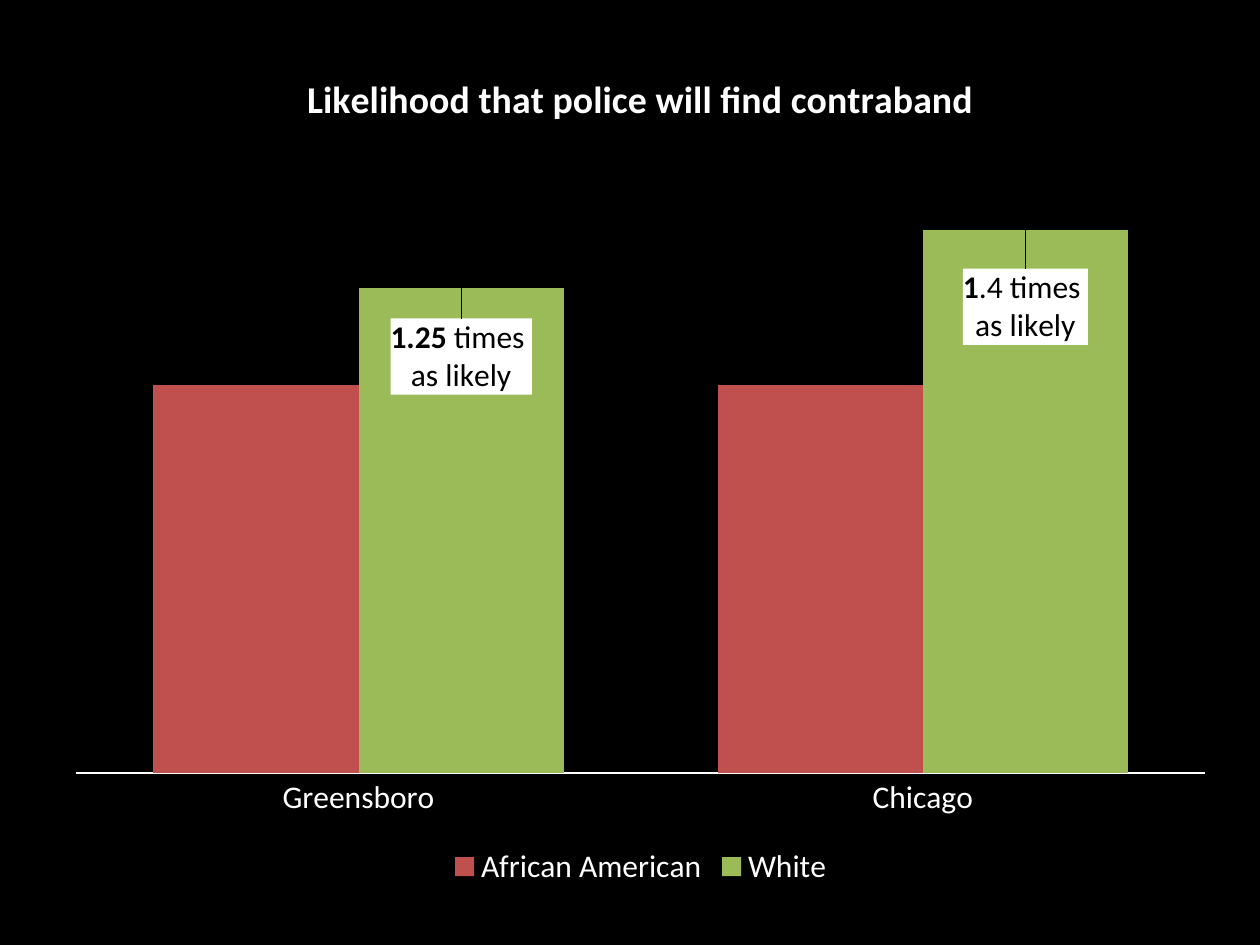
from lxml import etree
from pptx import Presentation
from pptx.chart.data import CategoryChartData
from pptx.dml.color import RGBColor
from pptx.enum.chart import XL_CHART_TYPE as ChartType
from pptx.enum.chart import XL_LABEL_POSITION as LabelPosition
from pptx.enum.chart import XL_LEGEND_POSITION as LegendPosition
from pptx.enum.chart import XL_TICK_LABEL_POSITION as TickLabels
from pptx.enum.chart import XL_TICK_MARK as TickMark
from pptx.oxml import parse_xml
from pptx.oxml.ns import qn
from pptx.util import Inches, Pt

BLACK = RGBColor(0x00, 0x00, 0x00)
WHITE = RGBColor(0xFF, 0xFF, 0xFF)
RED = RGBColor(0xC0, 0x50, 0x4D)
GREEN = RGBColor(0x9B, 0xBB, 0x59)
FONT = "Calibri"

TITLE = "Likelihood that police will find contraband"
CITIES = ["Greensboro", "Chicago"]
SERIES = [("African American", (1, 1), RED), ("White", (1.25, 1.4), GREEN)]
# Bold start, rest of first line, second line, downward shift (share of chart)
LABELS = [("1.25", " times ", "as likely", 0.03), ("1", ".4 times ", "as likely", 0.04)]
PLOT_AREA = {"x": 0.02, "y": 0.13, "w": 0.96, "h": 0.73}

CHART_NS = "http://schemas.openxmlformats.org/drawingml/2006/chart"
CHART_15_NS = "http://schemas.microsoft.com/office/drawing/2012/chart"
DRAWING_NS = "http://schemas.openxmlformats.org/drawingml/2006/main"


def style_font(font, size=18, color=WHITE, bold=False):
    font.name, font.size, font.bold = FONT, Pt(size), bold
    font.color.rgb = color


def make_layout(settings):
    layout = etree.Element(qn("c:layout"))
    manual = etree.SubElement(layout, qn("c:manualLayout"))
    for name, value in settings.items():
        etree.SubElement(manual, qn(f"c:{name}")).set("val", str(value))
    return layout


def add_label(point, start, rest, second_line, shift):
    label = point.data_label
    frame = label.text_frame
    first = frame.paragraphs[0]
    second = frame.add_paragraph()
    for para, text, bold in ((first, start, True), (first, rest, False),
                             (second, second_line, False)):
        span = para.add_run()
        span.text = text
        style_font(span.font, color=BLACK, bold=bold)
    label.position = LabelPosition.INSIDE_END

    # White label box, moved down inside its column
    element = frame._txBody.getparent().getparent()
    for old in element.findall(qn("c:layout")) + element.findall(qn("c:spPr")):
        element.remove(old)
    element.find(qn("c:idx")).addnext(make_layout({"x": 0, "y": shift}))
    element.find(qn("c:tx")).addnext(parse_xml(
        f'<c:spPr xmlns:c="{CHART_NS}" xmlns:a="{DRAWING_NS}">'
        f'<a:solidFill><a:srgbClr val="{WHITE}"/></a:solidFill></c:spPr>'))


deck = Presentation()
deck.slide_width, deck.slide_height = Inches(10), Inches(7.5)
page = deck.slides.add_slide(deck.slide_layouts[6])
page.background.fill.solid()
page.background.fill.fore_color.rgb = BLACK

# Chart
data = CategoryChartData(number_format="0.00")
data.categories = CITIES
for name, values, _ in SERIES:
    data.add_series(name, values)
chart = page.shapes.add_chart(
    ChartType.COLUMN_CLUSTERED, Inches(0.42), Inches(0.33),
    Inches(9.33), Inches(6.75), data).chart
style_font(chart.font)

# Title and legend
chart.has_title = True
title = chart.chart_title.text_frame.paragraphs[0]
span = title.add_run()
span.text = TITLE
style_font(span.font, size=21.6, bold=True)
chart.has_legend = True
chart.legend.position = LegendPosition.BOTTOM
chart.legend.include_in_layout = False
style_font(chart.legend.font)

# Axes
city_axis, value_axis = chart.category_axis, chart.value_axis
city_axis.major_tick_mark = TickMark.NONE
city_axis.format.line.color.rgb = WHITE
city_axis.format.line.width = Pt(0.75)
style_font(city_axis.tick_labels.font)
value_axis.minimum_scale, value_axis.maximum_scale = 0, 1.6
value_axis.has_major_gridlines = False
value_axis.tick_label_position = TickLabels.NONE
value_axis.visible = False

# Columns
plot = chart.plots[0]
plot.gap_width, plot.overlap, plot.vary_by_categories = 75, 0, False
for series, (_, _, color) in zip(plot.series, SERIES):
    series.format.fill.solid()
    series.format.fill.fore_color.rgb = color

# Labels on the second series, without leader lines
white_series = plot.series[1]
white_labels = white_series.data_labels
white_labels.show_value = True
style_font(white_labels.font, color=BLACK, bold=True)
for index, label in enumerate(LABELS):
    add_label(white_series.points[index], *label)
white_labels._element.append(parse_xml(
    f'<c:extLst xmlns:c="{CHART_NS}" xmlns:c15="{CHART_15_NS}">'
    '<c:ext uri="{CE6537A1-D6FC-4f65-9D91-7224C49458BB}">'
    '<c15:showLeaderLines val="0"/></c:ext></c:extLst>'))

# Plot area placement
area = chart._chartSpace.find(".//" + qn("c:plotArea"))
for old in area.findall(qn("c:layout")):
    area.remove(old)
area.insert(0, make_layout({"layoutTarget": "inner", "xMode": "edge",
                            "yMode": "edge", **PLOT_AREA}))

deck.save("out.pptx")
